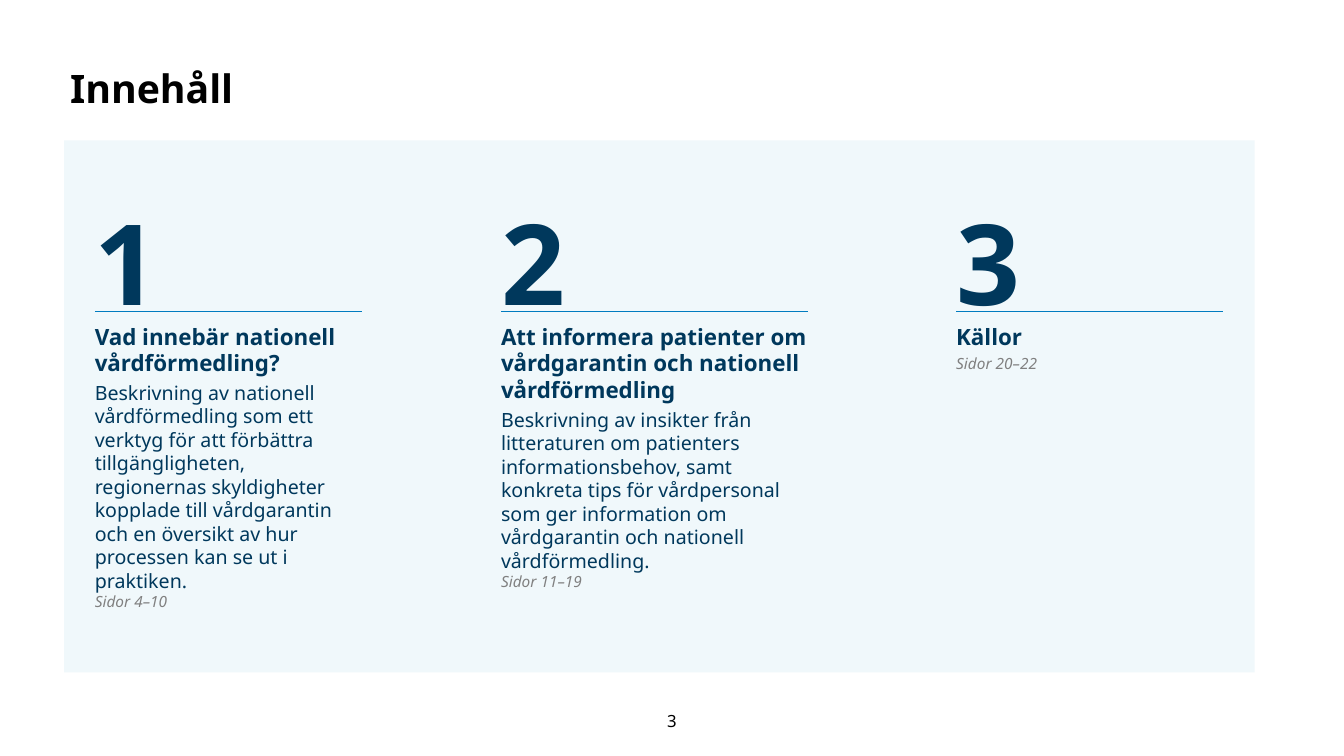
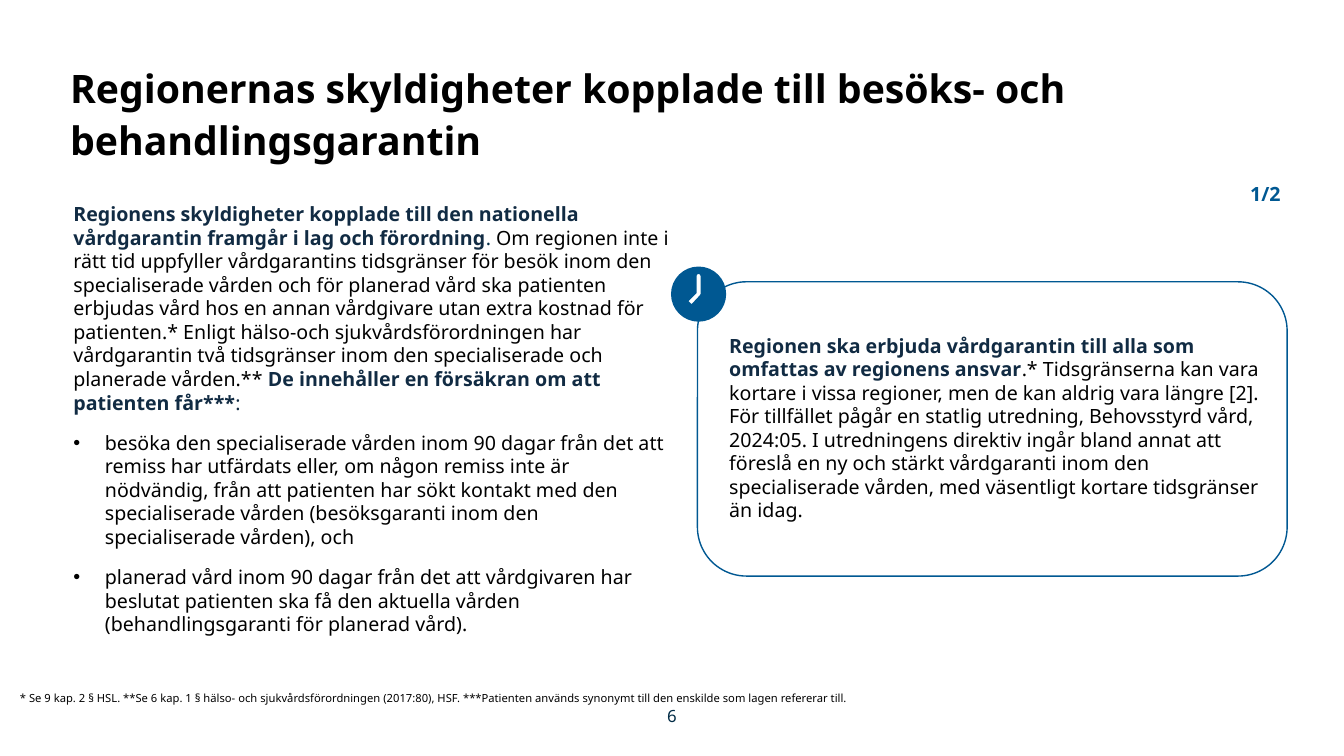
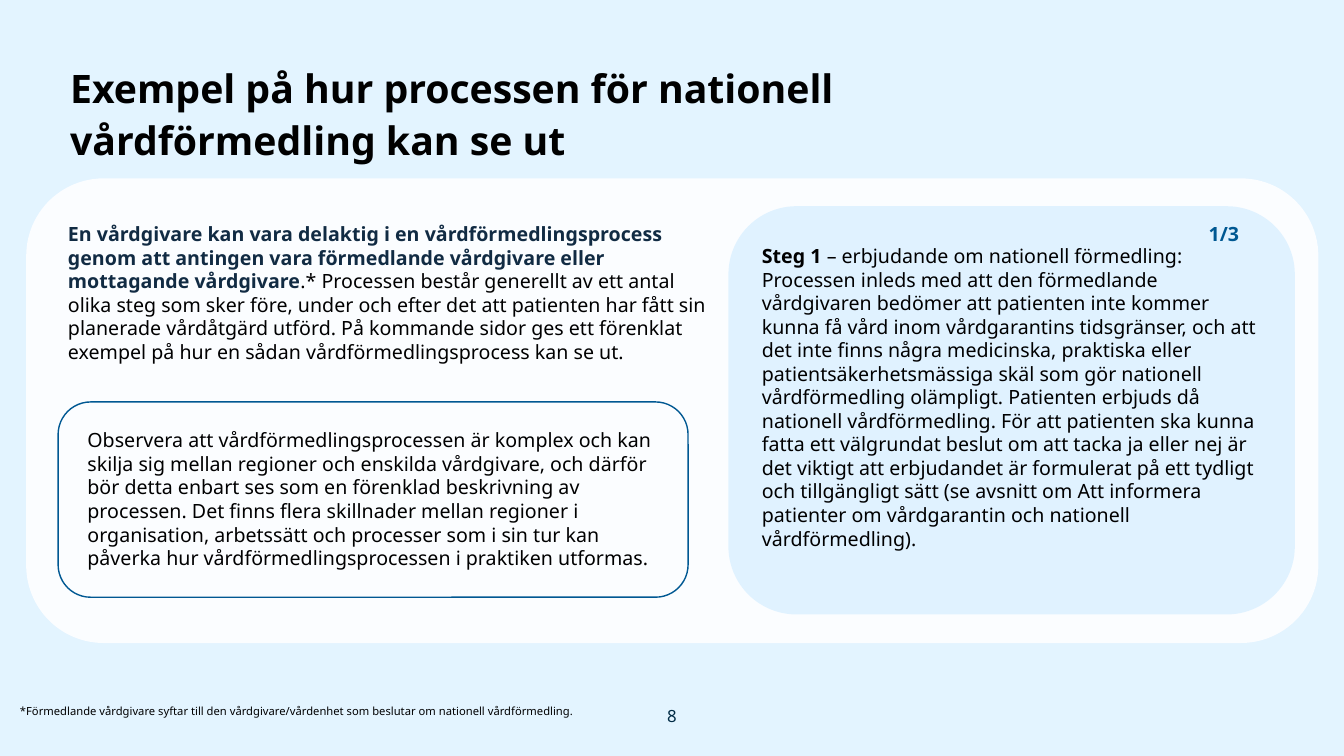
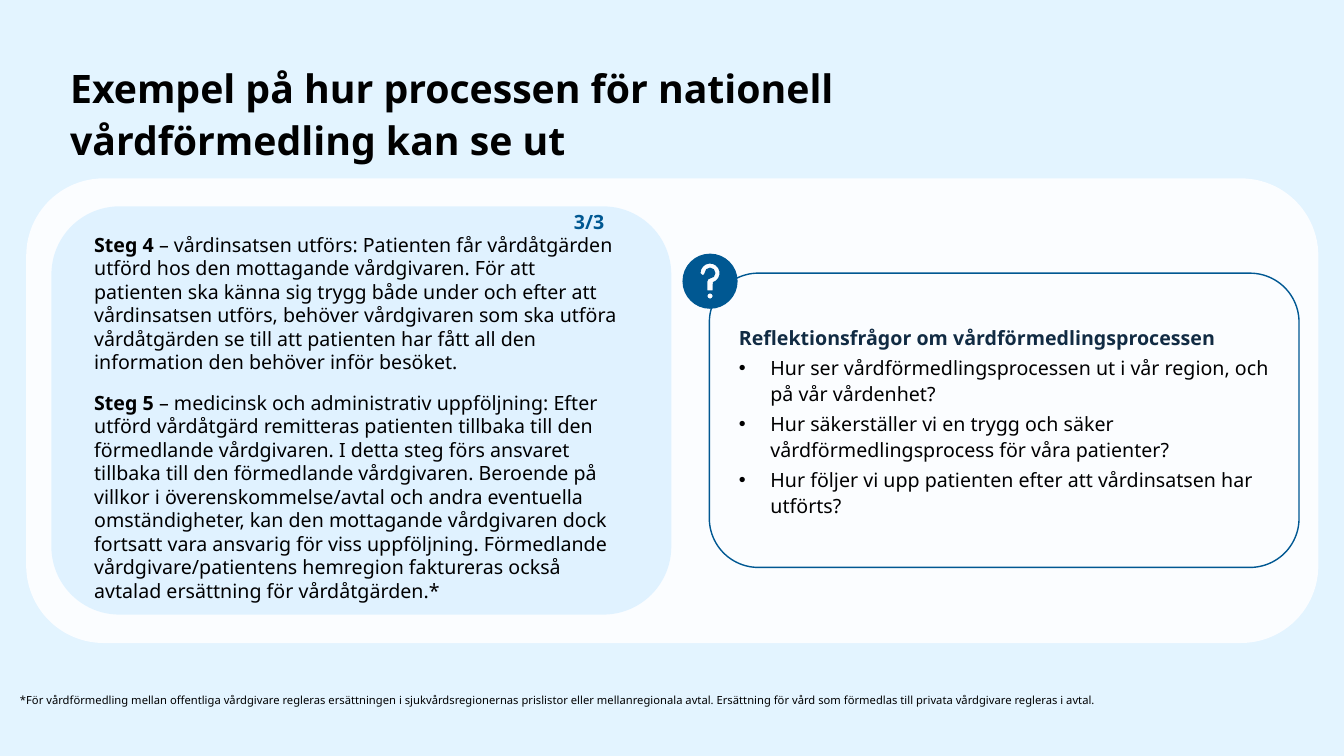
import copy
import math

from pptx import Presentation
from pptx.dml.color import RGBColor
from pptx.enum import shapes as shape_types, text as text_types
from pptx.oxml import ns
from pptx.util import Pt
from lxml import etree

# Shared look
FONT = "Noto Sans"
COLORS = {
    "black": "000000", "white": "FFFFFF", "sky": "E3F4FF", "pale": "DBEEF5",
    "panel": "91D5FF", "navy": "00385C", "ink": "112B43", "footer": "002B45",
    "blue": "005892", "rule": "017CC0", "grey": "808080",
}
# Text styles: size, colour, bold, italic
STYLES = {
    "title": (28, "black", True, False),
    "number": (80, "navy", True, False),
    "heading": (16, "navy", True, False),
    "summary": (14, "navy", False, False),
    "pages": (11, "grey", False, True),
    "plain": (14, "black", False, False),
    "bold": (14, "black", True, False),
    "lead": (14, "ink", True, False),
    "lead_dot": (14, "footer", False, False),
    "lead_end": (14, "ink", False, False),
    "counter": (14, "blue", True, False),
    "note": (8, "black", False, False),
    "page": (12, "footer", False, False),
    "page_black": (12, "black", False, False),
}
LINE_BREAK = ("\n", None)
TOP, MIDDLE, BOTTOM = (text_types.MSO_ANCHOR.TOP, text_types.MSO_ANCHOR.MIDDLE,
                       text_types.MSO_ANCHOR.BOTTOM)
LEFT, CENTER, RIGHT = (text_types.PP_ALIGN.LEFT, text_types.PP_ALIGN.CENTER,
                       text_types.PP_ALIGN.RIGHT)
INSETS = (7.2, 3.6, 7.2, 3.6)
NO_INSETS = (0, 0, 0, 0)
TITLE_BOX = (50.1, 42.5, 765.4, 85)
PANEL_BOX = (18.7, 127.4, 923, 331.9)
TALL_PANEL_BOX = (18.7, 127.4, 923, 346.3)
BULLET_INDENT = 22.5

# Content
CONTENTS_TITLE = "Innehåll"
CHAPTERS = [  # left, text width, rule width, heading, summary, pages
    (67.7, 190.8, 190.8, "Vad innebär nationell vårdförmedling?",
     "Beskrivning av nationell vårdförmedling som ett verktyg för att förbättra "
     "tillgängligheten, regionernas skyldigheter kopplade till vårdgarantin och en "
     "översikt av hur processen kan se ut i praktiken.", "Sidor 4–10"),
    (357.9, 226.1, 219.6,
     "Att informera patienter om vårdgarantin och nationell vårdförmedling",
     "Beskrivning av insikter från litteraturen om patienters informationsbehov, samt "
     "konkreta tips för vårdpersonal som ger information om vårdgarantin och nationell "
     "vårdförmedling.", "Sidor 11–19"),
    (683, 190.8, 190.8, "Källor", None, "Sidor 20–22"),
]

DUTIES_TITLE = "Regionernas skyldigheter kopplade till besöks- och behandlingsgarantin"
DUTIES = [
    [("Regionens skyldigheter kopplade till den nationella vårdgarantin framgår i lag och "
      "förordning", "lead"), (". ", "lead_dot"),
     ("Om regionen inte i rätt tid uppfyller vårdgarantins tidsgränser för besök inom den "
      "specialiserade vården och för planerad vård ska patienten erbjudas vård hos en annan "
      "vårdgivare utan extra kostnad för patienten.* Enligt hälso-och sjukvårdsförordningen "
      "har vårdgarantin två tidsgränser inom den specialiserade och planerade vården.** ",
      "plain"),
     ("De innehåller en försäkran om att patienten får***", "lead"), (":", "lead_end")],
    [("besöka den specialiserade vården inom 90 dagar från det att remiss har utfärdats "
      "eller, om någon remiss inte är nödvändig, från att patienten har sökt kontakt med den "
      "specialiserade vården (besöksgaranti inom den specialiserade vården), och", "plain")],
    [("planerad vård inom 90 dagar från det att vårdgivaren har beslutat patienten ska få "
      "den aktuella vården (behandlingsgaranti för planerad vård).", "plain")],
]
GUARANTEE = [
    [("Regionen ska erbjuda vårdgarantin till alla som omfattas av regionens ansvar", "lead"),
     (".* Tidsgränserna kan vara kortare i vissa regioner, men de kan aldrig vara längre [2]. "
      "För tillfället pågår en statlig utredning, Behovsstyrd vård, 2024:05. I utredningens "
      "direktiv ingår bland annat att föreslå en ny och stärkt vårdgaranti inom den "
      "specialiserade vården, med väsentligt kortare tidsgränser än idag.", "plain")],
]
DUTIES_NOTE = ("* Se 9 kap. 2 § HSL. **Se 6 kap. 1 § hälso- och sjukvårdsförordningen "
               "(2017:80), HSF. ***Patienten används synonymt till den enskilde som lagen "
               "refererar till.")

PROCESS_TITLE = "Exempel på hur processen för nationell vårdförmedling kan se ut"
PROCESS_INTRO = [
    [("En vårdgivare kan vara delaktig i en vårdförmedlingsprocess genom att antingen vara "
      "förmedlande vårdgivare eller mottagande vårdgivare", "lead"),
     (".* Processen består generellt av ett antal olika steg som sker före, under och efter "
      "det att patienten har fått sin planerade vårdåtgärd utförd. På kommande sidor ges ett "
      "förenklat exempel på hur en sådan vårdförmedlingsprocess kan se ut.", "plain")],
]
CAUTION = [
    [("Observera att vårdförmedlingsprocessen är komplex och kan skilja sig mellan regioner "
      "och enskilda vårdgivare, och därför bör detta enbart ses som en förenklad beskrivning "
      "av processen. Det finns flera skillnader mellan regioner i organisation, arbetssätt "
      "och processer som i sin tur kan påverka hur vårdförmedlingsprocessen i praktiken "
      "utformas.", "plain")],
]
FIRST_STEP = [
    [("Steg 1 ", "bold"),
     ("– erbjudande om nationell förmedling: Processen inleds med att den förmedlande "
      "vårdgivaren bedömer att patienten inte kommer kunna få vård inom vårdgarantins "
      "tidsgränser, och att det inte finns några medicinska, praktiska eller "
      "patientsäkerhetsmässiga skäl som gör nationell vårdförmedling olämpligt. Patienten "
      "erbjuds då nationell vårdförmedling. För att patienten ska kunna fatta ett välgrundat "
      "beslut om att tacka ja eller nej är det viktigt att erbjudandet är formulerat på ett "
      "tydligt och tillgängligt sätt (se avsnitt om Att informera patienter om vårdgarantin "
      "och nationell vårdförmedling).", "plain")],
]
PROCESS_NOTE = ("*Förmedlande vårdgivare syftar till den vårdgivare/vårdenhet som beslutar om "
                "nationell vårdförmedling.")
LAST_STEPS = [
    [("Steg 4 ", "bold"),
     ("– vårdinsatsen utförs: Patienten får vårdåtgärden utförd hos den mottagande "
      "vårdgivaren. För att patienten ska känna sig trygg både under och efter att "
      "vårdinsatsen utförs, behöver vårdgivaren som ska utföra vårdåtgärden se till att "
      "patienten har fått all den information den behöver inför besöket.", "plain")],
    [("Steg 5 ", "bold"),
     ("– medicinsk och administrativ uppföljning: Efter utförd vårdåtgärd remitteras "
      "patienten tillbaka till den förmedlande vårdgivaren. I detta steg förs ansvaret "
      "tillbaka till den förmedlande vårdgivaren. Beroende på villkor i "
      "överenskommelse/avtal och andra eventuella omständigheter, kan den mottagande "
      "vårdgivaren dock fortsatt vara ansvarig för viss uppföljning. Förmedlande "
      "vårdgivare/patientens hemregion faktureras också avtalad ersättning för "
      "vårdåtgärden.*", "plain")],
]
QUESTIONS = [
    [("Reflektionsfrågor om vårdförmedlingsprocessen", "lead")],
    [("Hur ser vårdförmedlingsprocessen ut i vår region, och på vår vårdenhet?", "plain")],
    [("Hur säkerställer vi en trygg och säker vårdförmedlingsprocess för våra patienter?",
      "plain")],
    [("Hur följer vi upp patienten efter att vårdinsatsen har utförts?", "plain")],
]
LAST_NOTE = ("*För vårdförmedling mellan offentliga vårdgivare regleras ersättningen i "
             "sjukvårdsregionernas prislistor eller mellanregionala avtal. Ersättning för "
             "vård som förmedlas till privata vårdgivare regleras i avtal.")


# Text helpers
def color(name):
    return RGBColor.from_string(COLORS[name])


def place(shape, box):
    shape.left, shape.top, shape.width, shape.height = map(Pt, box)


def add_run(paragraph, content, style):
    run = paragraph.add_run()
    run.text = content
    size, shade, bold, italic = STYLES[style]
    run.font.name, run.font.size = FONT, Pt(size)
    run.font.bold, run.font.italic = bold, italic
    run.font.color.rgb = color(shade)
    return run


def write(shape, paragraphs, after=0, spacing=1.0, align=LEFT, anchor=TOP,
          insets=INSETS, bullets_from=None):
    """Fill a shape; each paragraph is a list of (text, style)."""
    frame = shape.text_frame
    frame.word_wrap = True
    frame.auto_size = text_types.MSO_AUTO_SIZE.NONE
    frame.vertical_anchor = anchor
    (frame.margin_left, frame.margin_top,
     frame.margin_right, frame.margin_bottom) = map(Pt, insets)
    for index, runs in enumerate(paragraphs):
        paragraph = frame.add_paragraph() if index else frame.paragraphs[0]
        bulleted = bullets_from is not None and index >= bullets_from
        properties = paragraph._p.get_or_add_pPr()
        indent = Pt(BULLET_INDENT) if bulleted else 0
        properties.set("marL", str(indent))
        properties.set("indent", str(-indent))
        bullet = etree.SubElement(properties, ns.qn("a:buChar" if bulleted else "a:buNone"))
        if bulleted:
            bullet.set("char", "•")
        paragraph.alignment = align
        paragraph.space_before = Pt(0)
        paragraph.space_after = Pt(after)
        paragraph.line_spacing = spacing
        for content, style in runs:
            if style:
                run = add_run(paragraph, content, style)
            else:  # the break keeps the size of the run before it
                paragraph.add_line_break()
                paragraph._p[-1].append(copy.deepcopy(run._r.rPr))


def add_text(slide, box, paragraphs, **options):
    write(slide.shapes.add_textbox(*map(Pt, box)), paragraphs, **options)


def fill_body(slide, box, paragraphs, **options):
    body = slide.placeholders[1]
    place(body, box)
    body.element.getparent().append(body.element)  # in front of the panels
    write(body, paragraphs, bullets_from=1, **options)


# Slide and shape helpers
def add_slide(presentation, title, background="white", body=False):
    slide = presentation.slides.add_slide(presentation.slide_layouts[1 if body else 5])
    slide.background.fill.solid()
    slide.background.fill.fore_color.rgb = color(background)
    place(slide.shapes.title, TITLE_BOX)
    write(slide.shapes.title, [[(title, "title")]], spacing=1.1, insets=(0, 0, 7.2, 3.6))
    return slide


def add_panel(slide, box, fill, opacity, rounded=True):
    kind = shape_types.MSO_SHAPE.ROUNDED_RECTANGLE if rounded else shape_types.MSO_SHAPE.RECTANGLE
    panel = slide.shapes.add_shape(kind, *map(Pt, box))
    panel.shadow.inherit = False
    panel.line.fill.background()
    panel.fill.solid()
    panel.fill.fore_color.rgb = color(fill)
    shade = panel.element.xpath("./p:spPr/a:solidFill/a:srgbClr")[0]
    etree.SubElement(shade, ns.qn("a:alpha")).set("val", str(opacity * 1000))


def add_outline(slide, box):
    outline = slide.shapes.add_shape(shape_types.MSO_SHAPE.ROUNDED_RECTANGLE, *map(Pt, box))
    outline.shadow.inherit = False
    outline.fill.background()
    outline.line.color.rgb = color("blue")
    outline.line.width = Pt(1)


def add_rule(slide, left, top, width):
    rule = slide.shapes.add_connector(shape_types.MSO_CONNECTOR.STRAIGHT,
                                      Pt(left), Pt(top), Pt(left + width), Pt(top))
    rule.line.color.rgb = color("rule")
    rule.line.width = Pt(0.5)
    etree.SubElement(rule.element.spPr, ns.qn("a:effectLst"))


# Outlines are a start point, then three points for each Bézier curve
def arc(center_y, radius, start, end, pieces=4):
    step = math.radians(end - start) / pieces
    reach = 4 / 3 * math.tan(step / 4)
    points = []
    for piece in range(pieces + 1):
        angle = math.radians(start) + piece * step
        x, y = radius * math.cos(angle), radius * math.sin(angle)
        trio = [(x + reach * y, y - reach * x), (x, y), (x - reach * y, y + reach * x)]
        points += trio[0 if piece else 1:3 if piece < pieces else 2]
    return [(x, center_y + y) for x, y in points]


def straight(start, *corners):
    points = []
    for corner in corners:
        points += [start, corner, corner]
        start = corner
    return points


# Badge cut-outs, measured from the middle of the disc
DISC = arc(0, 19.7, 0, 360)
CLOCK_HANDS = [(1.4, 0), (1.4, 0.3), (1.2, 0.6), (0.9, 0.9)] + straight(
    (0.9, 0.9), (-5, 7.2), (-7.2, 5), (-1.4, -0.7), (-1.4, -13)) + [
    (-1.4, -13.8), (-0.8, -14.4), (0, -14.4), (0.8, -14.4), (1.4, -13.8), (1.4, -13)]
HOOK_OUTER = arc(-5.8, 6.8, 180, 433, 3)
HOOK_INNER = arc(-5.8, 3.9, 450, 180, 3)
QUESTION_HOOK = (HOOK_OUTER
                 + straight(HOOK_OUTER[-1], (1.8, 6.5), (-1.8, 6.5), (-1.8, 0))
                 + [(-1.8, -1), (-1, -1.9), HOOK_INNER[0]] + HOOK_INNER[1:]
                 + [(-3.9, -5), (-4.6, -4.4), (-5.4, -4.4),
                    (-6.2, -4.4), (-6.8, -5), (-6.8, -5.8)])
QUESTION_DOT = arc(10.6, 1.9, 0, 360)


def add_badge(slide, x, y, *cutouts):
    builder = None
    for contour in (DISC,) + cutouts:
        points = [(Pt(x + dx), Pt(y + dy)) for dx, dy in contour]
        if builder is None:
            builder = slide.shapes.build_freeform(*points[0])
        else:
            builder.move_to(*points[0])
        builder.add_line_segments(points[1:], close=True)
    badge = builder.convert_to_shape()
    lines = badge.element.xpath(".//a:lnTo")
    for index in range(0, len(lines), 3):  # three points become one curve
        curve = etree.Element(ns.qn("a:cubicBezTo"))
        lines[index].addprevious(curve)
        for line in lines[index:index + 3]:
            curve.append(line[0])
            line.getparent().remove(line)
    badge.shadow.inherit = False
    badge.fill.solid()
    badge.fill.fore_color.rgb = color("blue")
    badge.line.fill.background()


def add_counter(slide, left, top, label):
    add_text(slide, (left, top, 69.8, 16.6), [[(label, "counter")]],
             align=RIGHT, anchor=BOTTOM, insets=(0, 3.6, 0, 0))


def add_note(slide, top, note):
    add_text(slide, (7.2, top, 799.2, 17.3), [[(note, "note")]])


def add_page(slide, number, style="page", anchor=TOP):
    add_text(slide, (443.3, 500.4, 73.4, 28.8), [[(number, style)]], align=CENTER, anchor=anchor)


# Slides
def build_contents(presentation):
    slide = add_slide(presentation, CONTENTS_TITLE)
    add_page(slide, "3", "page_black", MIDDLE)
    add_panel(slide, (45.8, 100.3, 850.3, 380), "pale", 40, rounded=False)
    for number, (left, width, rule, heading, summary, pages) in enumerate(CHAPTERS, 1):
        add_text(slide, (left, 138.2, 98.6, 100.1), [[(str(number), "number")]], after=3,
                 align=text_types.PP_ALIGN.JUSTIFY, insets=NO_INSETS)
        add_rule(slide, left, 222.5, rule)
        details = [(summary, "summary"), LINE_BREAK] if summary else []
        add_text(slide, (left, 230.5, width, 64.1),
                 [[(heading, "heading")], details + [(pages, "pages")]],
                 after=3, insets=NO_INSETS)


def build_duties(presentation):
    slide = add_slide(presentation, DUTIES_TITLE, body=True)
    add_panel(slide, TALL_PANEL_BOX, "white", 88)
    fill_body(slide, (45.2, 140.8, 440.6, 319.7), DUTIES, after=12)
    add_text(slide, (513.8, 234.7, 396, 143.3), GUARANTEE)
    add_outline(slide, (498.2, 201.3, 421.2, 210.2))
    add_badge(slide, 499, 210.1, CLOCK_HANDS)
    add_counter(slide, 845, 130.3, "1/2")
    add_note(slide, 490.3, DUTIES_NOTE)
    add_page(slide, "6")


def build_first_step(presentation):
    slide = add_slide(presentation, PROCESS_TITLE, "sky")
    add_panel(slide, PANEL_BOX, "white", 88)
    add_panel(slide, (520.3, 147.3, 404.6, 291.6), "panel", 25)
    add_text(slide, (41.5, 155.2, 472.3, 108.7), PROCESS_INTRO)
    add_text(slide, (537.1, 170.8, 370.8, 244.8), FIRST_STEP)
    add_text(slide, (55.4, 302.4, 422.6, 108.7), CAUTION)
    add_outline(slide, (41.5, 287.1, 450, 139.5))
    add_counter(slide, 815.4, 158.4, "1/3")
    add_note(slide, 499.7, PROCESS_NOTE)
    add_page(slide, "8")


def build_last_steps(presentation):
    slide = add_slide(presentation, PROCESS_TITLE, "sky", body=True)
    add_panel(slide, PANEL_BOX, "white", 88)
    add_panel(slide, (36.7, 147.4, 442.8, 291.6), "panel", 25)
    add_counter(slide, 362, 149.8, "3/3")
    add_text(slide, (60.2, 162.6, 396, 273.6), LAST_STEPS, after=12)
    fill_body(slide, (520.6, 227.5, 409.7, 146.2), QUESTIONS, after=3, spacing=1.1)
    add_outline(slide, (506.7, 195.1, 421.2, 210.2))
    add_badge(slide, 507.2, 200.9, QUESTION_DOT, QUESTION_HOOK)
    add_note(slide, 491.8, LAST_NOTE)


def main():
    presentation = Presentation()
    presentation.slide_width, presentation.slide_height = Pt(960), Pt(540)
    for build in (build_contents, build_duties, build_first_step, build_last_steps):
        build(presentation)
    presentation.save("out.pptx")


if __name__ == "__main__":
    main()
